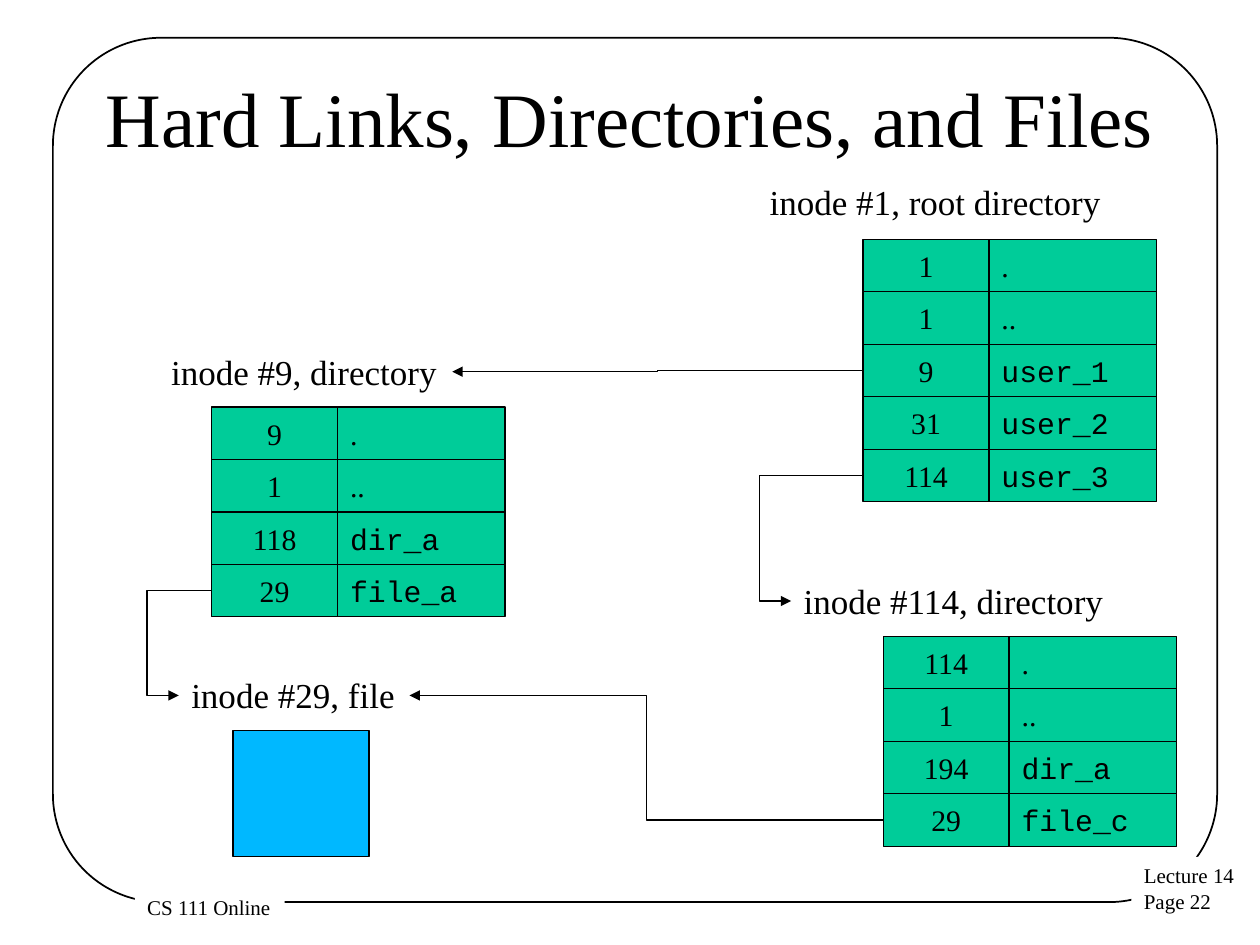
from lxml.etree import SubElement
from pptx import Presentation
from pptx.dml.color import RGBColor
from pptx.enum.shapes import MSO_CONNECTOR, MSO_SHAPE
from pptx.enum.text import MSO_ANCHOR, MSO_AUTO_SIZE, PP_ALIGN
from pptx.oxml.ns import qn
from pptx.util import Inches, Pt

BLACK = RGBColor(0x00, 0x00, 0x00)
WHITE = RGBColor(0xFF, 0xFF, 0xFF)
GREEN = RGBColor(0x00, 0xCC, 0x99)
BLUE = RGBColor(0x00, 0xB8, 0xFF)
SERIF = "Times New Roman"
MONO = "Courier New"

ROW_HEIGHT = 5 / 12
NUMBER_WIDTH = 1
NAME_WIDTH = 1.33
LABEL_HEIGHT = 0.44
LEFT_SIDE, RIGHT_SIDE = 1, 3


class Diagram:
    def __init__(self, page):
        self.page = page

    def add_lines(self, frame, lines, size, font=SERIF, align=PP_ALIGN.LEFT):
        for index, line in enumerate(lines):
            para = frame.add_paragraph() if index else frame.paragraphs[0]
            para.alignment = align
            span = para.add_run()
            span.text = line
            span.font.size = Pt(size)
            span.font.name = font
            span.font.color.rgb = BLACK

    def title(self, text):
        title = self.page.shapes.title
        title.left, title.top = Inches(0.5), Inches(0.3)
        title.width, title.height = Inches(9), Inches(1.25)
        title.text_frame.vertical_anchor = MSO_ANCHOR.MIDDLE
        self.add_lines(title.text_frame, [text], 44, align=PP_ALIGN.CENTER)

    def box(self, left, top, width, height, fill=None, line=0.75,
            kind=MSO_SHAPE.RECTANGLE):
        box = self.page.shapes.add_shape(
            kind, Inches(left), Inches(top), Inches(width), Inches(height))
        box.shadow.inherit = False
        if fill is None:
            box.fill.background()
        else:
            box.fill.solid()
            box.fill.fore_color.rgb = fill
        if line:
            box.line.color.rgb = BLACK
            box.line.width = Pt(line)
        else:
            box.line.fill.background()
        return box

    def frame(self):
        frame = self.box(0.42, 0.3, 9.24, 6.86, line=1,
                         kind=MSO_SHAPE.ROUNDED_RECTANGLE)
        frame.adjustments[0] = 0.125

    def footer(self, left, top, width, height, lines):
        box = self.box(left, top, width, height, WHITE, line=None)
        box.text_frame.word_wrap = False
        box.text_frame.vertical_anchor = MSO_ANCHOR.TOP
        self.add_lines(box.text_frame, lines, 12)

    def label(self, left, top, width, text):
        label = self.page.shapes.add_textbox(
            Inches(left), Inches(top), Inches(width), Inches(LABEL_HEIGHT))
        label.text_frame.word_wrap = False
        label.text_frame.auto_size = MSO_AUTO_SIZE.SHAPE_TO_FIT_TEXT
        self.add_lines(label.text_frame, [text], 20)
        return label

    def cell(self, left, top, width, text, font, align):
        cell = self.box(left, top, width, ROW_HEIGHT, GREEN)
        cell.text_frame.word_wrap = False
        cell.text_frame.vertical_anchor = MSO_ANCHOR.MIDDLE
        self.add_lines(cell.text_frame, [text], 17, font, align)
        return cell

    def directory(self, left, top, entries):
        """Stack the entries and return the inode number cells."""
        numbers = []
        for index, (number, name) in enumerate(entries):
            row_top = top + index * ROW_HEIGHT
            font = MONO if name.strip(".") else SERIF
            numbers.append(self.cell(left, row_top, NUMBER_WIDTH, number,
                                     SERIF, PP_ALIGN.CENTER))
            self.cell(left + NUMBER_WIDTH, row_top, NAME_WIDTH, name,
                      font, PP_ALIGN.LEFT)
        return numbers

    def link(self, cell, label, side, bend=0.5):
        """Lead an arrow from a cell to a label, turning at bend of its width."""
        end_x = label.left + (label.width if side == RIGHT_SIDE else 0)
        link = self.page.shapes.add_connector(
            MSO_CONNECTOR.ELBOW, cell.left, cell.top + cell.height // 2,
            end_x, label.top + label.height // 2)
        link.begin_connect(cell, LEFT_SIDE)
        link.end_connect(label, side)
        link.line.color.rgb = BLACK
        link.line.width = Pt(0.75)
        properties = link.element.spPr
        guides = properties.find(qn("a:prstGeom")).get_or_add_avLst()
        SubElement(guides, qn("a:gd"), name="adj1",
                   fmla=f"val {round(bend * 100000)}")
        SubElement(properties.find(qn("a:ln")), qn("a:tailEnd"),
                   type="triangle")
        SubElement(properties, qn("a:effectLst"))


def main():
    deck = Presentation()
    deck.slide_width, deck.slide_height = Inches(10), Inches(7.5)
    diagram = Diagram(deck.slides.add_slide(deck.slide_layouts[5]))

    diagram.frame()
    diagram.footer(8.98, 6.8, 0.93, 0.51, ["Lecture 14", "Page 22"])
    diagram.footer(1.07, 7.05, 1.19, 0.3, ["CS 111 Online"])
    diagram.title("Hard Links, Directories, and Files")

    diagram.label(6.01, 1.38, 2.85, "inode #1, root directory")
    root = diagram.directory(6.85, 1.9, [
        ("1", "."), ("1", ".."), ("9", "user_1"), ("31", "user_2"),
        ("114", "user_3")])

    user_1_label = diagram.label(1.26, 2.73, 2.33, "inode #9, directory")
    user_1 = diagram.directory(1.68, 3.23, [
        ("9", "."), ("1", ".."), ("118", "dir_a"), ("29", "file_a")])

    user_3_label = diagram.label(6.28, 4.55, 2.6, "inode #114, directory")
    user_3 = diagram.directory(7.01, 5.05, [
        ("114", "."), ("1", ".."), ("194", "dir_a"), ("29", "file_c")])

    file_label = diagram.label(1.42, 5.3, 1.83, "inode #29, file")
    diagram.box(1.85, 5.8, 1.08, 1, BLUE)

    diagram.link(root[2], user_1_label, RIGHT_SIDE)
    diagram.link(root[4], user_3_label, LEFT_SIDE, bend=1.44)
    diagram.link(user_1[3], file_label, LEFT_SIDE, bend=1.97)
    diagram.link(user_3[3], file_label, RIGHT_SIDE)

    deck.save("out.pptx")


if __name__ == "__main__":
    main()
